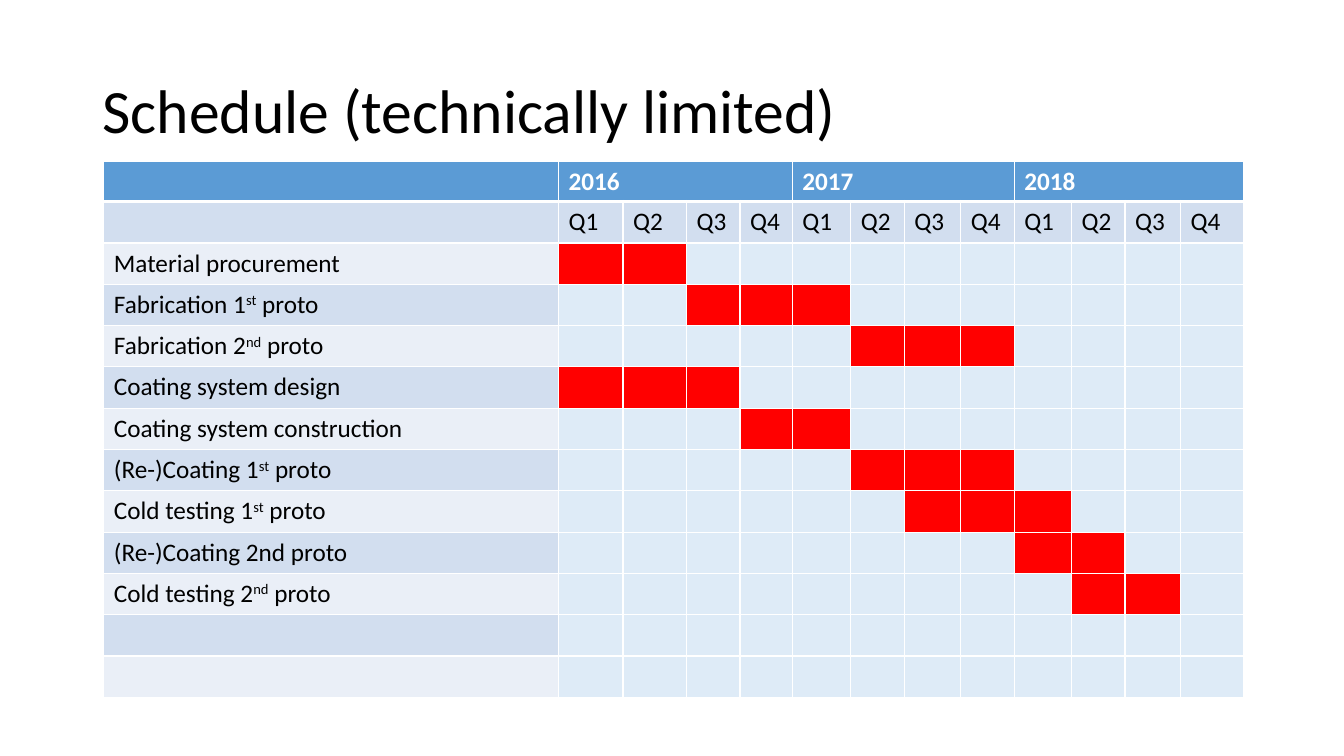
from lxml import etree
from pptx import Presentation
from pptx.dml.color import RGBColor
from pptx.enum.text import MSO_ANCHOR
from pptx.oxml.ns import qn
from pptx.util import Inches, Pt

MIDDLE = MSO_ANCHOR.MIDDLE

TITLE = "Schedule (technically limited)"
YEARS = ["2016", "2017", "2018"]
QUARTERS = ["Q1", "Q2", "Q3", "Q4"]
# task label as (text, superscript, text), first active quarter, last active quarter
TASKS = [
    (("Material procurement",), 1, 2),
    (("Fabrication 1", "st", " proto"), 3, 5),
    (("Fabrication 2", "nd", " proto"), 6, 8),
    (("Coating system design",), 1, 3),
    (("Coating system construction",), 4, 5),
    (("(Re-)Coating 1", "st", " proto"), 6, 8),
    (("Cold testing 1", "st", " proto"), 7, 9),
    (("(Re-)Coating 2nd proto",), 9, 10),
    (("Cold testing 2", "nd", " proto"), 10, 11),
    ((), 0, 0),
    ((), 0, 0),
]
COLUMN_WIDTHS = [4.51, 0.64, 0.63, 0.53, 0.52, 0.58, 0.53, 0.56, 0.53, 0.57, 0.53, 0.55, 0.63]
YEAR_HEIGHT, ROW_HEIGHT = 0.39, 0.41
FONT = "Calibri"
BLACK, WHITE = "000000", "FFFFFF"
HEADER, BAND_DARK, BAND_LIGHT = "5B9BD5", "D2DEEF", "EAEFF7"
ACTIVE, IDLE = "FF0000", "DEEBF7"


def color(value):
    return RGBColor.from_string(value)


def add_runs(paragraph, texts, size, text_color, bold=False):
    for position, text in enumerate(texts):
        run = paragraph.add_run()
        run.text = text
        run.font.name = FONT
        run.font.size = Pt(size)
        run.font.bold = bold
        run.font.color.rgb = color(text_color)
        if position == 1:
            run.font._element.set("baseline", "30000")


def style_cell(cell, fill, bottom=1):
    properties = cell._tc.get_or_add_tcPr()
    for side, width in (("L", 1), ("R", 1), ("T", 1), ("B", bottom)):
        line = etree.SubElement(properties, qn(f"a:ln{side}"), w=str(Pt(width)))
        solid = etree.SubElement(line, qn("a:solidFill"))
        etree.SubElement(solid, qn("a:srgbClr"), val=WHITE)
    cell.fill.solid()
    cell.fill.fore_color.rgb = color(fill)


def write_cell(cell, texts, text_color=BLACK, bold=False):
    add_runs(cell.text_frame.paragraphs[0], texts, 18, text_color, bold)


presentation = Presentation()
presentation.slide_width = Inches(13.33)
presentation.slide_height = Inches(7.5)
slide = presentation.slides.add_slide(presentation.slide_layouts[6])

heading = slide.shapes.add_textbox(Inches(0.92), Inches(0.4), Inches(11.5), Inches(1.45)).text_frame
heading.word_wrap = True
heading.vertical_anchor = MIDDLE
heading.paragraphs[0].line_spacing = 0.9
add_runs(heading.paragraphs[0], [TITLE], 44, BLACK)

row_count = len(TASKS) + 2
schedule = slide.shapes.add_table(
    row_count, len(COLUMN_WIDTHS), Inches(1.03), Inches(1.6),
    Inches(sum(COLUMN_WIDTHS)), Inches(YEAR_HEIGHT + ROW_HEIGHT * (row_count - 1)),
).table
for column, width in zip(schedule.columns, COLUMN_WIDTHS):
    column.width = Inches(width)
for index, row in enumerate(schedule.rows):
    row.height = Inches(ROW_HEIGHT if index else YEAR_HEIGHT)

for column in range(len(COLUMN_WIDTHS)):
    style_cell(schedule.cell(0, column), HEADER, bottom=3)
    style_cell(schedule.cell(1, column), BAND_DARK)

for year_index, year in enumerate(YEARS):
    first = 1 + year_index * len(QUARTERS)
    year_cell = schedule.cell(0, first)
    year_cell.merge(schedule.cell(0, first + len(QUARTERS) - 1))
    write_cell(year_cell, [year], WHITE, bold=True)
    for offset, quarter in enumerate(QUARTERS):
        write_cell(schedule.cell(1, first + offset), [quarter])

for row, (label, start, end) in enumerate(TASKS, start=2):
    label_cell = schedule.cell(row, 0)
    style_cell(label_cell, BAND_DARK if row % 2 else BAND_LIGHT)
    write_cell(label_cell, label)
    for quarter in range(1, len(COLUMN_WIDTHS)):
        style_cell(schedule.cell(row, quarter), ACTIVE if start <= quarter <= end else IDLE)

presentation.save("out.pptx")
